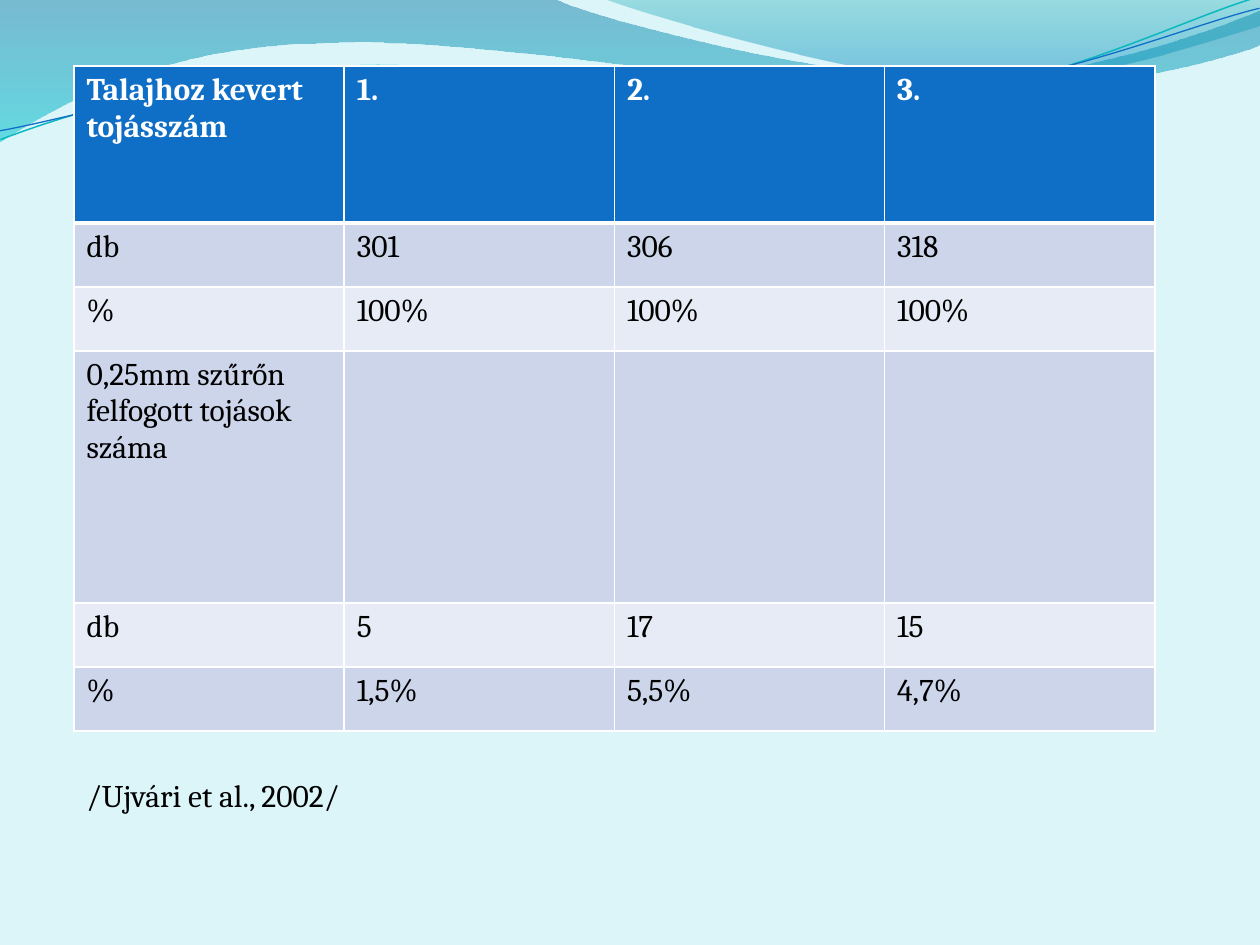
from pptx import Presentation
from pptx.dml.color import RGBColor
from pptx.enum.text import MSO_AUTO_SIZE
from pptx.oxml.ns import qn
from pptx.util import Emu, Pt
from lxml.etree import SubElement

PX = 914400 / 126


def px(length):
    return Emu(round(length * PX))


def color(hex_string):
    return RGBColor.from_string(hex_string)


class SlideBuilder:
    font_name = "Cambria"
    font_size = 18
    border = "FFFFFF"

    def __init__(self, slide, background):
        self.slide = slide
        slide.background.fill.solid()
        slide.background.fill.fore_color.rgb = color(background)

    def style(self, paragraph, hex_string="000000", bold=False):
        font = paragraph.font
        font.name, font.size, font.bold = self.font_name, Pt(self.font_size), bold
        font.color.rgb = color(hex_string)

    def outline(self, start, segments, closed):
        """Each segment holds one point (straight) or three points (cubic curve)."""
        builder = self.slide.shapes.build_freeform(*start, scale=PX)
        builder.add_line_segments([point for segment in segments for point in segment],
                                  close=closed)
        shape = builder.convert_to_shape()
        shape.shadow.inherit = False
        lines = iter(list(shape._element.spPr.iter(qn("a:lnTo"))))
        for segment in segments:
            first, *others = [next(lines) for _ in segment]
            if others:
                cubic = first.makeelement(qn("a:cubicBezTo"))
                first.addprevious(cubic)
                for line in (first, *others):
                    cubic.append(line[0])
                    line.getparent().remove(line)
        return shape

    def wave(self, start, segments, stops):
        shape = self.outline(start, segments, True)
        shape.line.fill.background()
        shape.fill.gradient()
        shape.fill.gradient_angle = 270
        for stop, (position, hex_string, _) in zip(shape.fill.gradient_stops, stops):
            stop.position = position
            stop.color.rgb = color(hex_string)
        for element, (_, _, opacity) in zip(shape._element.spPr.iter(qn("a:srgbClr")), stops):
            SubElement(element, qn("a:alpha"), val=str(opacity * 1000))

    def curve(self, start, segments, hex_string, width, rotation):
        shape = self.outline(start, segments, False)
        shape.rotation = rotation
        shape.fill.background()
        shape.line.color.rgb = color(hex_string)
        shape.line.width = Pt(width)

    def cell_borders(self, cell, widths):
        properties = cell._tc.get_or_add_tcPr()
        for side, width in zip("LRTB", widths):
            line = SubElement(properties, qn(f"a:ln{side}"), w=str(Pt(width)))
            fill = SubElement(line, qn("a:solidFill"))
            SubElement(fill, qn("a:srgbClr"), val=self.border)

    def table(self, left, top, width, row_heights, rows, header_fill, band_fills):
        columns = len(rows[0])
        table = self.slide.shapes.add_table(
            len(rows), columns, px(left), px(top), px(width), px(sum(row_heights))).table
        for column in table.columns:
            column.width = px(width / columns)
        for index, (height, texts) in enumerate(zip(row_heights, rows)):
            table.rows[index].height = px(height)
            header = index == 0
            for cell, text in zip(table.rows[index].cells, texts):
                self.cell_borders(cell, (1, 1, 3 if index == 1 else 1, 3 if header else 1))
                cell.fill.solid()
                cell.fill.fore_color.rgb = color(
                    header_fill if header else band_fills[(index - 1) % 2])
                cell.text = text
                self.style(cell.text_frame.paragraphs[0],
                           "FFFFFF" if header else "000000", header)

    def text(self, left, top, width, height, text):
        frame = self.slide.shapes.add_textbox(
            px(left), px(top), px(width), px(height)).text_frame
        frame.word_wrap = True
        frame.auto_size = MSO_AUTO_SIZE.SHAPE_TO_FIT_TEXT
        frame.text = text
        self.style(frame.paragraphs[0])


def main():
    presentation = Presentation()
    presentation.slide_width, presentation.slide_height = px(1260), px(945)
    slide = presentation.slides.add_slide(presentation.slide_layouts[6])
    builder = SlideBuilder(slide, "DBF5F9")

    # Waves along the top edge
    builder.wave((0, 0), [
        [(554, -1)],
        [(600, 21), (837, 79), (955, 79)],
        [(1075, 79), (1207, 33), (1260, 11)],
        [(1261, 45)],
        [(1239, 55), (1096, 96), (940, 95)],
        [(784, 95), (481, 35), (324, 43)],
        [(163, 45), (58, 105), (-1, 142)],
    ], [(0, "0074A1", 45), (1, "00C6CF", 55)])
    builder.wave((604, -1), [
        [(641, 14), (859, 78), (969, 82)],
        [(1079, 87), (1211, 40), (1260, 26)],
        [(1260, 0)],
    ], [(0, "00A1A9", 30), (0.8, "008BBF", 45)])

    # Thin curves, tilted slightly
    builder.curve((-2, 110), [
        [(58, 90), (200, 52), (350, 53)],
        [(499, 53), (745, 118), (896, 114)],
        [(1049, 109), (1184, 45), (1260, 27)],
    ], "0AB8BF", 0.85, 357.3)
    builder.curve((-2, 101), [
        [(57, 94), (207, 57), (357, 58)],
        [(509, 58), (750, 112), (902, 108)],
        [(1052, 104), (1188, 52), (1262, 38)],
    ], "0F6FC6", 0.75, 357.3)

    # Egg counts
    builder.table(74, 66, 1081, [157, 64, 64, 252, 64, 64], [
        ["Talajhoz kevert tojásszám", "1.", "2.", "3."],
        ["db", "301", "306", "318"],
        ["%", "100%", "100%", "100%"],
        ["0,25mm szűrőn felfogott tojások száma", "", "", ""],
        ["db", "5", "17", "15"],
        ["%", "1,5%", "5,5%", "4,7%"],
    ], "0F6FC6", ["CCD5EA", "E7EBF5"])

    # Reference
    builder.text(74, 770, 1101, 50, "/Ujvári et al., 2002/")

    presentation.save("out.pptx")


if __name__ == "__main__":
    main()
